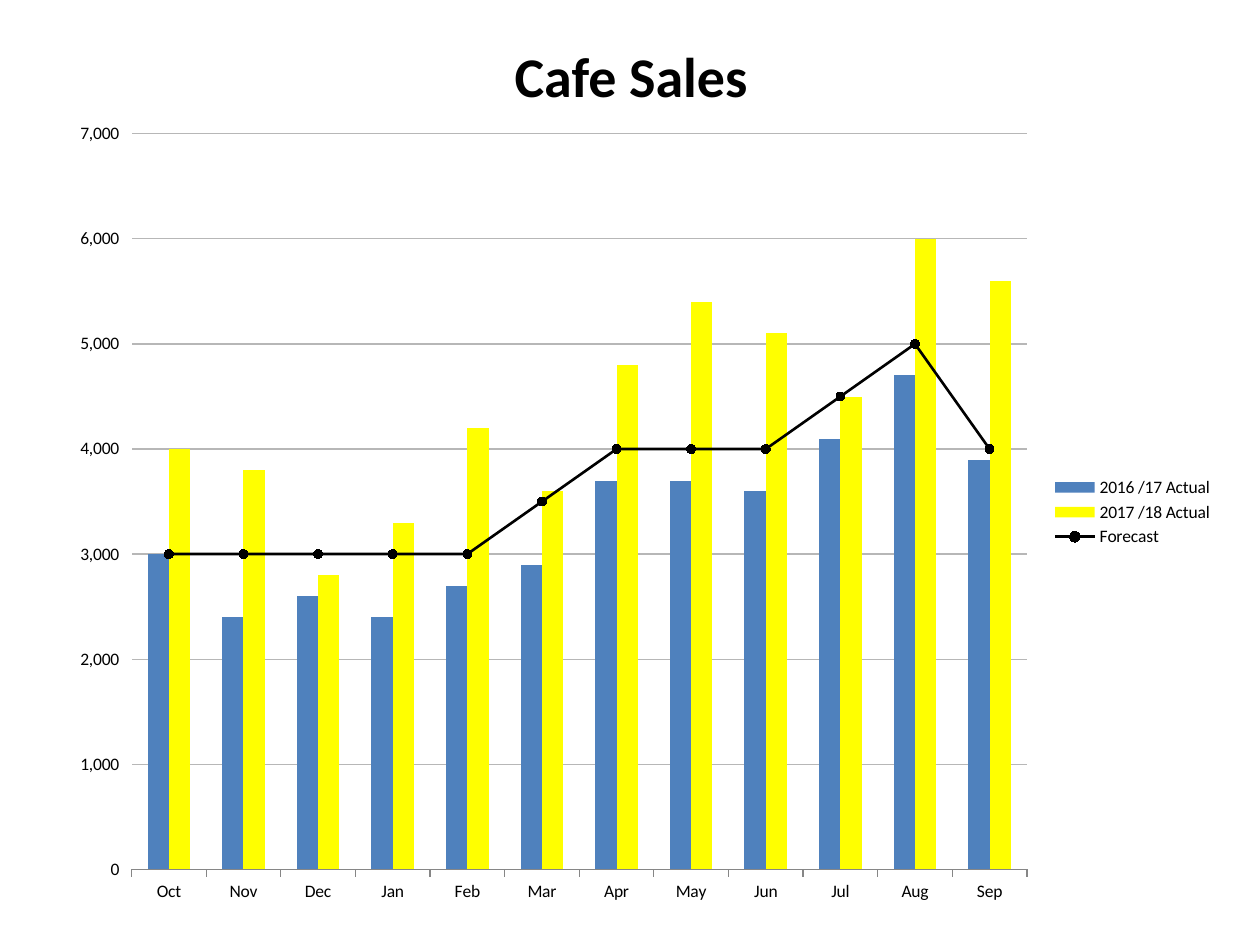
import dataclasses

import pptx
import pptx.chart.data
import pptx.dml.color
import pptx.enum.chart
import pptx.enum.text
import pptx.oxml
import pptx.oxml.ns
import pptx.util

Inches = pptx.util.Inches
Pt = pptx.util.Pt


@dataclasses.dataclass(frozen=True)
class Theme:
    font: str = "Calibri"
    ink: str = "000000"
    blue: str = "4F81BD"
    gold: str = "FFFF00"
    grid: str = "B7B7B7"
    axis: str = "868686"
    paper: str = "FFFFFF"
    head: int = 32
    body: int = 10


THEME = Theme()
MONTHS = ["Oct", "Nov", "Dec", "Jan", "Feb", "Mar",
          "Apr", "May", "Jun", "Jul", "Aug", "Sep"]
SALES = {
    "2016 /17 Actual": [3000, 2400, 2600, 2400, 2700, 2900,
                        3700, 3700, 3600, 4100, 4700, 3900],
    "2017 /18 Actual": [4000, 3800, 2800, 3300, 4200, 3600,
                        4800, 5400, 5100, 4500, 6000, 5600],
    "Forecast": [3000, 3000, 3000, 3000, 3000, 3500,
                 4000, 4000, 4000, 4500, 5000, 4000],
}


def tint(hue):
    return pptx.dml.color.RGBColor.from_string(hue)


def paint(fill, hue):
    fill.solid()
    fill.fore_color.rgb = tint(hue)


def rule(line, hue, width):
    paint(line.fill, hue)
    line.width = Pt(width)


def style(font, size, hue=THEME.ink, bold=False):
    font.name = THEME.font
    font.size = Pt(size)
    font.bold = bold
    font.color.rgb = tint(hue)


def add_text(slide, text, box, size, hue=THEME.ink, bold=False):
    frame = slide.shapes.add_textbox(*map(Inches, box)).text_frame
    frame.word_wrap = True
    frame.auto_size = pptx.enum.text.MSO_AUTO_SIZE.SHAPE_TO_FIT_TEXT
    para = frame.paragraphs[0]
    para.alignment = pptx.enum.text.PP_ALIGN.CENTER
    run = para.add_run()
    run.text = text
    style(run.font, size, hue, bold)


def make_xml(tag, body):
    space = pptx.oxml.ns.nsdecls("c")
    return pptx.oxml.parse_xml(f"<c:{tag} {space}>{body}</c:{tag}>")


def place_plot(chart, left, top, width, height):
    area = chart.plots[0]._element.getparent()
    for old in area.findall(pptx.oxml.ns.qn("c:layout")):
        area.remove(old)
    parts = {"x": left, "y": top, "w": width, "h": height}
    body = '<c:layoutTarget val="inner"/>'
    body += "".join(f'<c:{key}Mode val="edge"/>' for key in "xy")
    body += "".join(f'<c:{key} val="{val}"/>' for key, val in parts.items())
    area.insert(0, make_xml("layout", f"<c:manualLayout>{body}</c:manualLayout>"))
    fill = (f'<a:solidFill {pptx.oxml.ns.nsdecls("a")}>'
            f'<a:srgbClr val="{THEME.paper}"/></a:solidFill>')
    area.append(make_xml("spPr", fill))


def split_line(chart):
    bars = chart.plots[0]._element
    item = bars.findall(pptx.oxml.ns.qn("c:ser"))[-1]
    for flag in item.findall(pptx.oxml.ns.qn("c:invertIfNegative")):
        item.remove(flag)
    axes = "".join(f'<c:axId val="{axis.get("val")}"/>'
                   for axis in bars.findall(pptx.oxml.ns.qn("c:axId")))
    line = make_xml("lineChart", '<c:grouping val="standard"/>'
                    '<c:varyColors val="0"/><c:marker val="1"/>' + axes)
    line.insert(2, item)
    bars.addnext(line)


def style_axes(chart):
    ticks = pptx.enum.chart.XL_TICK_MARK
    months = chart.category_axis
    months.major_tick_mark = ticks.OUTSIDE
    months.minor_tick_mark = ticks.NONE
    rule(months.format.line, THEME.axis, 0.75)
    scale = chart.value_axis
    scale.minimum_scale = 0
    scale.maximum_scale = 7000
    scale.major_unit = 1000
    scale.major_tick_mark = ticks.OUTSIDE
    scale.minor_tick_mark = ticks.NONE
    scale.tick_labels.number_format = "#,##0"
    scale.tick_labels.number_format_is_linked = False
    scale.format.line.fill.background()
    scale.has_major_gridlines = True
    rule(scale.major_gridlines.format.line, THEME.grid, 0.75)


def style_line(item):
    item.smooth = False
    rule(item.format.line, THEME.ink, 1.5)
    mark = item.marker
    mark.style = pptx.enum.chart.XL_MARKER_STYLE.CIRCLE
    mark.size = 5
    paint(mark.format.fill, THEME.ink)
    rule(mark.format.line, THEME.ink, 0.75)


def add_chart(slide, box):
    data = pptx.chart.data.CategoryChartData(number_format="#,##0")
    data.categories = MONTHS
    for name, vals in SALES.items():
        data.add_series(name, vals)
    kind = pptx.enum.chart.XL_CHART_TYPE.COLUMN_CLUSTERED
    chart = slide.shapes.add_chart(kind, *map(Inches, box), data).chart
    chart.has_title = False
    style(chart.font, THEME.body)
    chart.has_legend = True
    chart.legend.position = pptx.enum.chart.XL_LEGEND_POSITION.RIGHT
    chart.legend.include_in_layout = False
    split_line(chart)
    bars, line = chart.plots
    bars.gap_width = 150
    bars.overlap = 0
    bars.vary_by_categories = False
    for item, hue in zip(bars.series, (THEME.blue, THEME.gold)):
        paint(item.format.fill, hue)
        item.format.line.fill.background()
    style_line(line.series[0])
    style_axes(chart)
    place_plot(chart, 0.065, 0.033, 0.765, 0.908)


def main():
    deck = pptx.Presentation()
    deck.slide_width = Inches(10)
    deck.slide_height = Inches(7.5)
    slide = deck.slides.add_slide(deck.slide_layouts[6])
    paint(slide.background.fill, THEME.paper)
    add_chart(slide, (0.44, 0.85, 9.29, 6.43))
    add_text(slide, "Cafe Sales ", (3.79, 0.28, 2.54, 0.64),
             size=THEME.head, bold=True)
    deck.save("out.pptx")


if __name__ == "__main__":
    main()
